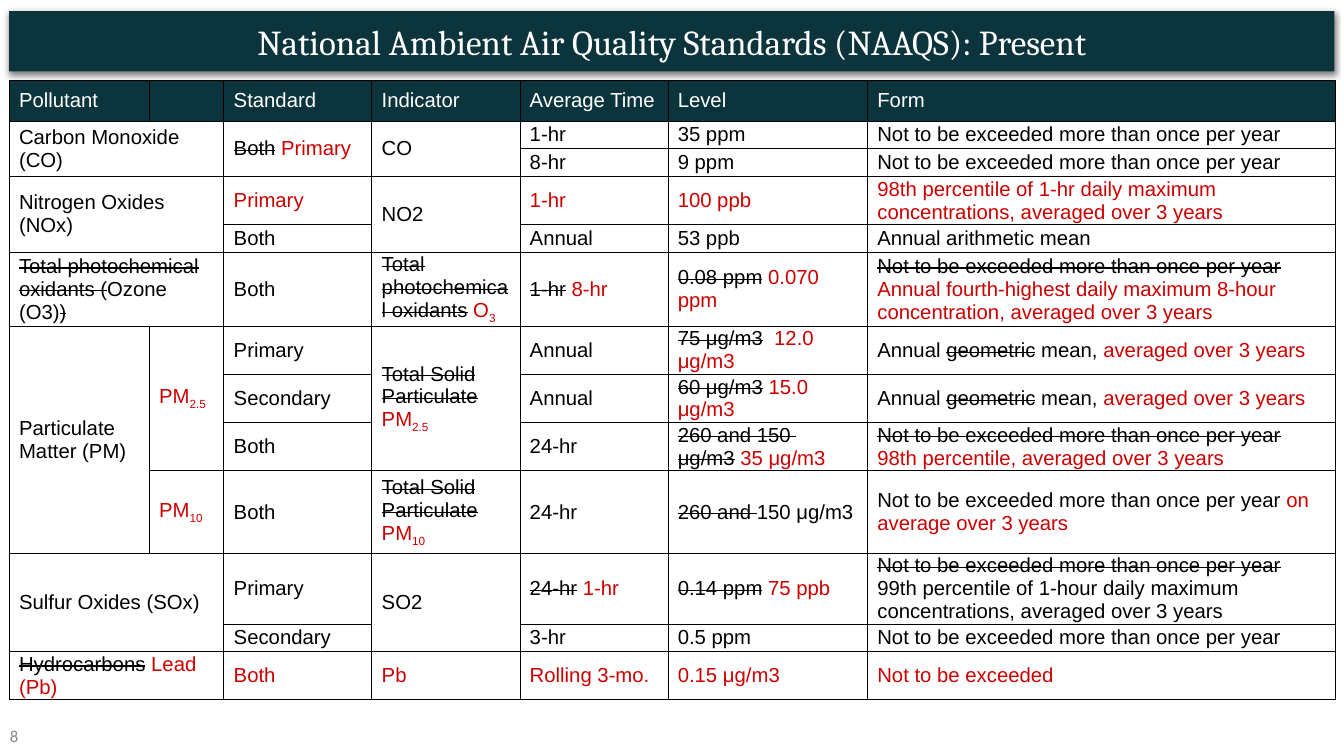
from dataclasses import dataclass
from itertools import product, takewhile

from lxml import etree
from pptx import Presentation
from pptx.dml.color import RGBColor
from pptx.enum.text import MSO_ANCHOR, MSO_AUTO_SIZE, PP_ALIGN
from pptx.oxml.ns import qn
from pptx.util import Cm, Pt

MIDDLE = MSO_ANCHOR.MIDDLE
CENTER, LEFT = PP_ALIGN.CENTER, PP_ALIGN.LEFT
NO_AUTOFIT = MSO_AUTO_SIZE.NONE
TITLE_ONLY = 5


@dataclass(frozen=True)
class Theme:
    dark: str = "0C343D"
    light: str = "FFFFFF"
    ink: str = "000000"
    change: str = "CC0000"
    muted: str = "888888"
    title_font: str = "Cambria"
    table_font: str = "Arial"
    number_font: str = "Calibri"
    title_size: float = 25
    table_size: float = 14.5
    number_size: float = 12
    border: float = 0.5


THEME = Theme()

# Boxes are left, top, width, height in centimetres.
TITLE_BOX = (0.23, 0.28, 33.4, 1.52)
TABLE_BOX = (0.23, 2.03, 33.4, 16)
NUMBER_BOX = (0, 18.03, 7.62, 1.02)
COLUMN_WIDTHS = (3.53, 1.88, 3.73, 3.73, 3.73, 5.03, 11.78)
ROW_HEIGHTS = (1.02, 0.69, 0.71, 0.69, 0.69, 1.02, 0.69, 0.69, 0.69, 2.08, 0.69, 0.69, 0.69)

# In a cell, "|" parts the runs; a run opens with "-" if struck out, "+" if
# changed, "_" if a changed subscript. "<" and "^" join the cell left or above.
ONCE = "Not to be exceeded more than once per year"
PM_MEAN = "Annual |-geometric| mean, |+averaged over 3 years"
STANDARDS = (
    ("Pollutant", "", "Standard", "Indicator", "Average Time", "Level", "Form"),
    ("Carbon Monoxide (CO)", "<", "-Both| |+Primary", "CO", "1-hr", "35 ppm", ONCE),
    ("^", "^", "^", "^", "8-hr", "9 ppm", ONCE),
    ("Nitrogen Oxides (NOx)", "<", "+Primary", "NO2", "+1-hr", "+100 ppb",
     "+98th percentile of 1-hr daily maximum concentrations, averaged over 3 years"),
    ("^", "^", "Both", "^", "Annual", "53 ppb", "Annual arithmetic mean"),
    ("-Total photochemical oxidants (|Ozone (O3)|-)", "<", "Both",
     "-Total photochemical oxidants| |+O|_3", "-1-hr| |+8-hr", "-0.08 ppm| |+0.070 ppm",
     f"-{ONCE}| |+Annual fourth-highest daily maximum 8-hour concentration, "
     "averaged over 3 years"),
    ("Particulate Matter (PM)", "+PM|_2.5", "Primary", "-Total Solid Particulate| |+PM|_2.5",
     "Annual", "-75 μg/m3|  |+12.0 μg/m3", PM_MEAN),
    ("^", "^", "Secondary", "^", "Annual", "-60 μg/m3| |+15.0 μg/m3", PM_MEAN),
    ("^", "^", "Both", "^", "24-hr", "-260 and 150  μg/m3| |+35 μg/m3",
     f"-{ONCE}| |+98th percentile, averaged over 3 years"),
    ("^", "+PM|_10", "Both", "-Total Solid Particulate| |+PM|_10", "24-hr",
     "-260 and |150 μg/m3", f"{ONCE} |+on average over 3 years"),
    ("Sulfur Oxides (SOx)", "<", "Primary", "SO2", "-24-hr| |+1-hr", "-0.14 ppm| |+75 ppb",
     f"-{ONCE}| 99th percentile of 1-hour daily maximum concentrations, "
     "averaged over 3 years"),
    ("^", "^", "Secondary", "^", "3-hr", "0.5 ppm", ONCE),
    ("-Hydrocarbons| |+Lead (Pb)", "<", "+Both", "+Pb", "+Rolling 3-mo.", "+0.15 μg/m3",
     "+Not to be exceeded"),
)
JOINS = ("<", "^")
RUN_MARKS = {
    "-": (THEME.ink, {"strike": "sngStrike"}),
    "+": (THEME.change, {}),
    "_": (THEME.change, {"baseline": "-25000"}),
}


def set_attributes(target, values):
    for name, value in values.items():
        setattr(target, name, value)


def add_run(paragraph, text, font_name, size, color):
    run = paragraph.add_run()
    run.text = text
    set_attributes(run.font, {"name": font_name, "size": Pt(size), "bold": False})
    run.font.color.rgb = RGBColor.from_string(color)
    return run


def add_marked_runs(paragraph, text, color):
    for part in text.split("|"):
        run_color, properties = RUN_MARKS.get(part[0], (color, {}))
        words = part[1:] if part[0] in RUN_MARKS else part
        run = add_run(paragraph, words, THEME.table_font, THEME.table_size, run_color)
        for name, value in properties.items():
            run.font._element.set(name, value)


def add_shadow(shape):
    effects = etree.SubElement(shape._element.spPr, qn("a:effectLst"))
    shadow = etree.SubElement(effects, qn("a:outerShdw"), blurRad=str(Pt(4.5)),
                              dist=str(Pt(1.5)), dir="5400000", algn="bl", rotWithShape="0")
    color = etree.SubElement(shadow, qn("a:srgbClr"), val=THEME.ink)
    etree.SubElement(color, qn("a:alpha"), val="50000")


def build_title(slide, box):
    title = slide.shapes.title
    set_attributes(title, dict(zip(("left", "top", "width", "height"), map(Cm, box))))
    title.fill.solid()
    title.fill.fore_color.rgb = RGBColor.from_string(THEME.dark)
    add_shadow(title)
    frame = title.text_frame
    set_attributes(frame, {"vertical_anchor": MIDDLE, "word_wrap": True,
                           "auto_size": NO_AUTOFIT})
    paragraph = frame.paragraphs[0]
    paragraph.alignment = CENTER
    add_run(paragraph, "National Ambient Air Quality Standards (NAAQS): Present",
            THEME.title_font, THEME.title_size, THEME.light)


def add_borders(cell):
    properties = cell._tc.get_or_add_tcPr()
    for side in ("lnL", "lnR", "lnT", "lnB"):
        line = etree.SubElement(properties, qn(f"a:{side}"), w=str(Pt(THEME.border)))
        fill = etree.SubElement(line, qn("a:solidFill"))
        etree.SubElement(fill, qn("a:srgbClr"), val=THEME.ink)


def format_cell(cell, is_header):
    set_attributes(cell, {"vertical_anchor": MIDDLE, "margin_left": Cm(0.25),
                          "margin_right": Cm(0.25), "margin_top": Cm(0.03),
                          "margin_bottom": Cm(0.03)})
    add_borders(cell)
    if is_header:
        cell.fill.solid()
        cell.fill.fore_color.rgb = RGBColor.from_string(THEME.dark)
    else:
        cell.fill.background()


def merge_span(table, row, column):
    """Merge a cell with the join marks to its right and below it."""
    right = takewhile(lambda text: text == "<", STANDARDS[row][column + 1:])
    below = takewhile(lambda texts: texts[column] == "^", STANDARDS[row + 1:])
    last_row, last_column = row + len(list(below)), column + len(list(right))
    if (last_row, last_column) != (row, column):
        table.cell(row, column).merge(table.cell(last_row, last_column))


def build_standards_table(slide, box):
    row_count, column_count = len(STANDARDS), len(COLUMN_WIDTHS)
    graphic_frame = slide.shapes.add_table(row_count, column_count, *map(Cm, box))
    table = graphic_frame.table
    set_attributes(table, {"first_row": False, "horz_banding": False})
    for column, width in zip(table.columns, COLUMN_WIDTHS):
        column.width = Cm(width)
    for row, height in zip(table.rows, ROW_HEIGHTS):
        row.height = Cm(height)
    for row, column in product(range(row_count), range(column_count)):
        cell, text = table.cell(row, column), STANDARDS[row][column]
        format_cell(cell, row == 0)
        if text in JOINS:
            continue
        merge_span(table, row, column)
        if text:
            color = THEME.light if row == 0 else THEME.ink
            add_marked_runs(cell.text_frame.paragraphs[0], text, color)


def build_slide_number(slide, box):
    frame = slide.shapes.add_textbox(*map(Cm, box)).text_frame
    set_attributes(frame, {"vertical_anchor": MIDDLE, "word_wrap": True})
    paragraph = frame.paragraphs[0]
    paragraph.alignment = LEFT
    add_run(paragraph, "8", THEME.number_font, THEME.number_size, THEME.muted)


def main():
    presentation = Presentation()
    set_attributes(presentation, {"slide_width": Cm(33.87), "slide_height": Cm(19.05)})
    slide = presentation.slides.add_slide(presentation.slide_layouts[TITLE_ONLY])
    build_title(slide, TITLE_BOX)
    build_standards_table(slide, TABLE_BOX)
    build_slide_number(slide, NUMBER_BOX)
    presentation.save("out.pptx")


if __name__ == "__main__":
    main()
